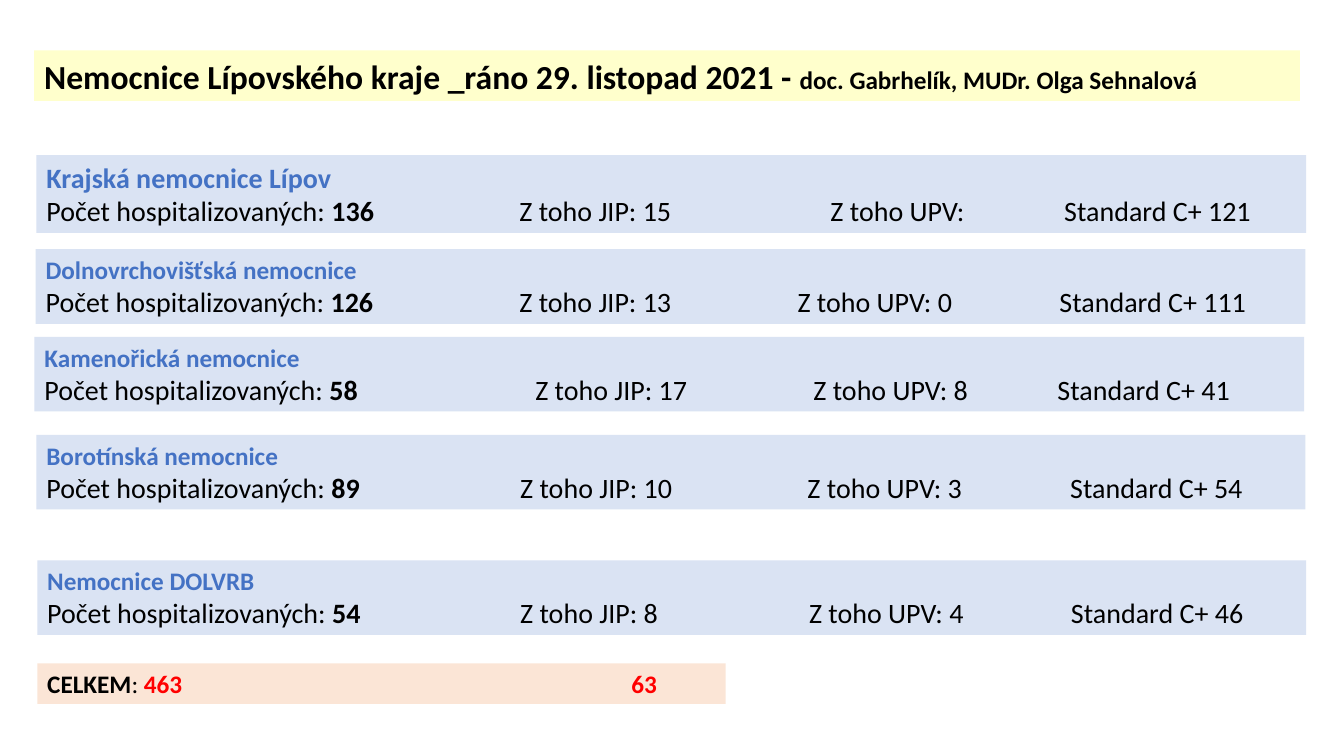
from dataclasses import dataclass

from lxml import etree
from pptx import Presentation
from pptx import util as u
from pptx.dml.color import RGBColor
from pptx.enum import shapes, text
from pptx.oxml import ns

BLACK = RGBColor(0x00, 0x00, 0x00)
RED = RGBColor(0xFF, 0x00, 0x00)
BLUE = RGBColor(0x44, 0x72, 0xC4)
PALE_BLUE = RGBColor(0xDA, 0xE3, 0xF3)
PALE_YELLOW = RGBColor(0xFF, 0xFF, 0xCC)
PALE_ORANGE = RGBColor(0xFB, 0xE5, 0xD6)
FONT = "Calibri"


@dataclass(frozen=True)
class Area:
    left: float
    top: float
    width: float
    height: float


@dataclass(frozen=True)
class Hospital:
    name: str
    patients: int
    intensive: str
    ventilated: str
    standard: int
    area: Area
    tabs: tuple[float, ...]
    name_size: int = 18


HOSPITALS = [
    Hospital("Krajská nemocnice Lípov", 136, "15", "", 121,
             Area(0.92, 3.91, 32.0, 1.96), (11.92, 19.76, 25.65), 20),
    Hospital("Dolnovrchovišťská nemocnice", 126, "13", "0", 111,
             Area(0.9, 6.28, 32.0, 1.88), (11.94, 18.95, 25.55)),
    Hospital("Kamenořická nemocnice", 58, "17", "8", 41,
             Area(0.87, 8.49, 32.0, 1.88), (12.37, 19.38, 25.53)),
    Hospital("Borotínská nemocnice", 89, "10", "3", 54,
             Area(0.92, 10.96, 31.98, 1.88), (11.94, 19.18, 25.8)),
    Hospital("Nemocnice DOLVRB", 54, "8", "4", 46,
             Area(0.94, 14.12, 31.98, 1.88), (11.92, 19.2, 25.8)),
]


def place(box, area: Area, fill: RGBColor):
    box.left, box.top = u.Cm(area.left), u.Cm(area.top)
    box.width, box.height = u.Cm(area.width), u.Cm(area.height)
    box.fill.solid()
    box.fill.fore_color.rgb = fill
    frame = box.text_frame
    frame.word_wrap = True
    frame.auto_size = text.MSO_AUTO_SIZE.NONE
    frame.vertical_anchor = text.MSO_ANCHOR.TOP
    return frame


def add_box(page, area: Area, fill: RGBColor):
    box = page.shapes.add_shape(shapes.MSO_SHAPE.RECTANGLE, 0, 0, 0, 0)
    box.shadow.inherit = False
    box.line.fill.background()
    return place(box, area, fill)


def style(para, size: int, color: RGBColor = BLACK, bold: bool = False) -> None:
    para.alignment = text.PP_ALIGN.LEFT
    para.font.name = FONT
    para.font.size = u.Pt(size)
    para.font.bold = bold
    para.font.color.rgb = color


def add_span(para, words: str, bold: bool | None = None):
    span = para.add_run()
    span.text = words
    span.font.bold = bold
    if bold is None:
        span.font.color.rgb = para.font.color.rgb
    else:
        span.font.color.rgb = BLACK
    return span


def set_tabs(para, stops: tuple[float, ...]) -> None:
    tab_list = etree.Element(ns.qn("a:tabLst"))
    for stop in stops:
        etree.SubElement(tab_list, ns.qn("a:tab"), pos=str(u.Cm(stop)), algn="l")
    para._p.get_or_add_pPr().insert(0, tab_list)


def add_title(page) -> None:
    frame = place(page.shapes.title, Area(0.86, 1.27, 31.9, 1.27), PALE_YELLOW)
    para = frame.paragraphs[0]
    style(para, 24, bold=True)
    add_span(para, "Nemocnice Lípovského kraje _ráno 29. listopad 2021 - ")
    add_span(para, "doc. Gabrhelík, MUDr. Olga Sehnalová").font.size = u.Pt(18)


def add_hospital(page, hospital: Hospital) -> None:
    frame = add_box(page, hospital.area, PALE_BLUE)
    heading = frame.paragraphs[0]
    style(heading, hospital.name_size, BLUE, True)
    add_span(heading, hospital.name)
    counts = frame.add_paragraph()
    style(counts, 20)
    set_tabs(counts, hospital.tabs)
    add_span(counts, "Počet hospitalizovaných: ", False)
    add_span(counts, str(hospital.patients), True)
    ventilated = f"Z toho UPV: {hospital.ventilated}".rstrip()
    add_span(counts, f"\tZ toho JIP: {hospital.intensive}\t{ventilated}"
                     f"\tStandard C+ {hospital.standard}", False)


def add_total(page) -> None:
    frame = add_box(page, Area(0.94, 16.72, 17.35, 1.02), PALE_ORANGE)
    para = frame.paragraphs[0]
    style(para, 18, RED, True)
    set_tabs(para, (14.72,))
    add_span(para, "CELKEM", True)
    add_span(para, ": ", False)
    add_span(para, "463\t63")


def main() -> None:
    deck = Presentation()
    deck.slide_width, deck.slide_height = u.Cm(33.87), u.Cm(19.05)
    page = deck.slides.add_slide(deck.slide_layouts.get_by_name("Title Only"))
    add_title(page)
    for hospital in HOSPITALS:
        add_hospital(page, hospital)
    add_total(page)
    deck.save("out.pptx")


if __name__ == "__main__":
    main()
